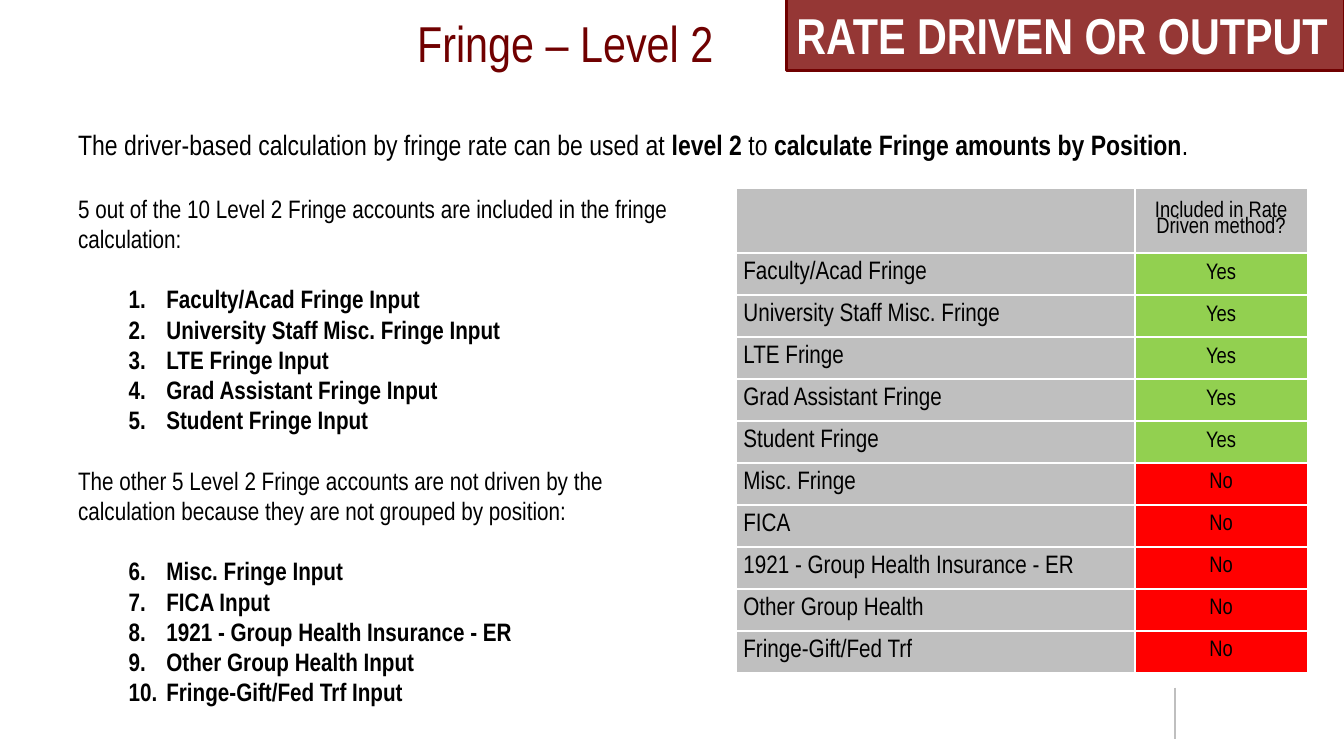
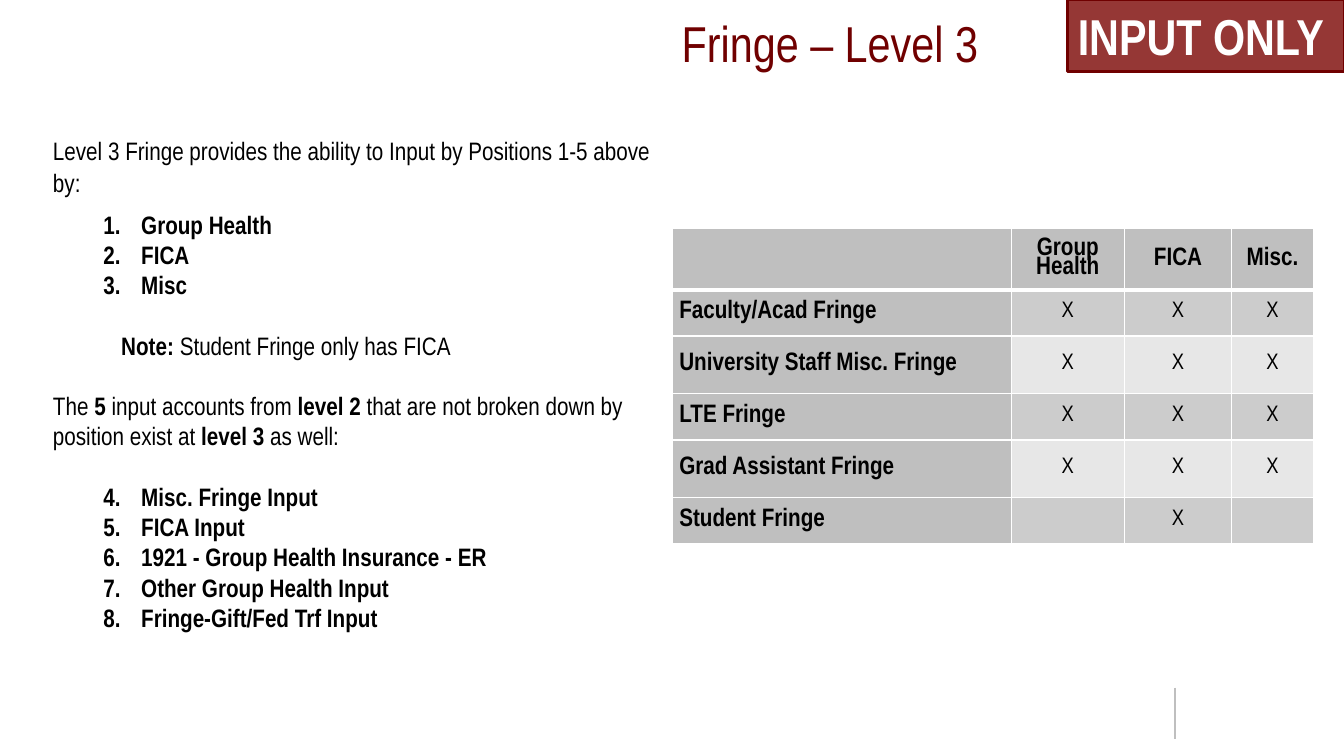
"""Build two slides on fringe levels, each with a banner, lists and a table."""
from lxml import etree
from pptx import Presentation, util as u
from pptx.dml.color import RGBColor
from pptx.enum import shapes, text
from pptx.oxml.ns import qn

BLACK = RGBColor(0x00, 0x00, 0x00)
WHITE = RGBColor(0xFF, 0xFF, 0xFF)
MAROON = RGBColor(0x70, 0x00, 0x00)
BRICK = RGBColor(0x95, 0x37, 0x35)
GRAY = RGBColor(0xBF, 0xBF, 0xBF)
DIM = RGBColor(0xCC, 0xCC, 0xCC)
PALE = RGBColor(0xE7, 0xE7, 0xE7)
GREEN = RGBColor(0x92, 0xD0, 0x50)
RED = RGBColor(0xFF, 0x00, 0x00)

FONT = "Arial Narrow"
LEFT, MID, RIGHT = text.PP_ALIGN.LEFT, text.PP_ALIGN.CENTER, text.PP_ALIGN.RIGHT
GAP = 21.6


def px(*vals):
    return [u.Emu(v * 9525) for v in vals]


class Deck:
    def __init__(self):
        self.prs = Presentation()
        self.prs.slide_width, self.prs.slide_height = px(1280, 720)
        self.slide = None

    def page(self, title, edge, label, box):
        self.slide = self.prs.slides.add_slide(self.prs.slide_layouts[6])
        self.rule(1119, 655, 1119, 704)
        self.banner(label, box)
        frame = self.box((0, 11, edge, 58))
        frame.vertical_anchor = text.MSO_ANCHOR.MIDDLE
        self.fill(frame.paragraphs[0], title, 36, MAROON, RIGHT)

    def rule(self, *ends):
        line = self.slide.shapes.add_connector(
            shapes.MSO_CONNECTOR.STRAIGHT, *px(*ends))
        line.line.color.rgb = GRAY
        line.line.width = u.Pt(1.5)
        etree.SubElement(line._element.spPr, qn("a:effectLst"))

    def banner(self, label, box):
        rect = self.slide.shapes.add_shape(
            shapes.MSO_SHAPE.RECTANGLE, *px(*box))
        rect.shadow.inherit = False
        rect.fill.solid()
        rect.fill.fore_color.rgb = BRICK
        rect.line.color.rgb = MAROON
        rect.line.width = u.Pt(2)
        frame = rect.text_frame
        frame.word_wrap = False
        frame.auto_size = text.MSO_AUTO_SIZE.SHAPE_TO_FIT_TEXT
        frame.vertical_anchor = text.MSO_ANCHOR.TOP
        self.fill(frame.paragraphs[0], "|" + label, 36, WHITE)

    def box(self, box):
        frame = self.slide.shapes.add_textbox(*px(*box)).text_frame
        frame.word_wrap = True
        return frame

    def fill(self, para, words, size=18, color=BLACK, align=LEFT):
        para.alignment = align
        for i, bit in enumerate(words.split("|")):
            if bit:
                run = para.add_run()
                run.text = bit
                font = run.font
                font.name, font.size, font.bold = FONT, u.Pt(size), i % 2 == 1
                font.color.rgb = color

    def para(self, frame, words, size=18, before=0, indent=0):
        para = frame.paragraphs[0]
        if para.runs:
            para = frame.add_paragraph()
        if indent:
            para._p.get_or_add_pPr().set("marL", str(px(indent)[0]))
        if before:
            para.space_before = u.Pt(before)
        self.fill(para, words, size)
        return para

    def items(self, frame, names, start=1, before=GAP):
        for i, name in enumerate(names):
            para = self.para(frame, "|" + name, 18, 0 if i else before, 84)
            props = para._p.get_or_add_pPr()
            props.set("indent", str(px(-36)[0]))
            etree.SubElement(props, qn("a:buFont"), typeface="+mj-lt")
            etree.SubElement(props, qn("a:buAutoNum"),
                             type="arabicPeriod", startAt=str(start))

    def table(self, at, cols, highs, rows, tints, head=18, thick=1):
        size = (sum(cols), sum(highs))
        grid = self.slide.shapes.add_table(
            len(rows), len(cols), *px(*at, *size)).table
        grid.first_row = grid.horz_banding = False
        for col, wide in zip(grid.columns, px(*cols)):
            col.width = wide
        for row, high in zip(grid.rows, px(*highs)):
            row.height = high
        for r, row in enumerate(rows):
            for c, words in enumerate(row):
                cell = grid.cell(r, c)
                self.edges(cell, r, thick)
                cell.fill.solid()
                cell.fill.fore_color.rgb = tints[r - 1] if r and c else GRAY
                cell.vertical_anchor = text.MSO_ANCHOR.MIDDLE
                cell.margin_left = cell.margin_right = px(7)[0]
                cell.margin_top = cell.margin_bottom = 0
                para = cell.text_frame.paragraphs[0]
                para.line_spacing = 0.8
                points = head if r == 0 else 16 if c else 18
                self.fill(para, words, points, align=MID if c else LEFT)

    def edges(self, cell, r, thick):
        props = cell._tc.get_or_add_tcPr()
        for side in ("lnL", "lnR", "lnT", "lnB"):
            wide = thick if (r, side) in ((0, "lnB"), (1, "lnT")) else 1
            line = etree.SubElement(props, qn("a:" + side), w=str(u.Pt(wide)))
            fill = etree.SubElement(line, qn("a:solidFill"))
            etree.SubElement(fill, qn("a:srgbClr"), val=str(WHITE))


STAFF = ["Faculty/Acad Fringe", "University Staff Misc. Fringe", "LTE Fringe",
         "Grad Assistant Fringe", "Student Fringe"]
OTHER = ["Misc. Fringe", "FICA", "1921 - Group Health Insurance - ER",
         "Other Group Health", "Fringe-Gift/Fed Trf"]


def inputs(names):
    return [n if n.endswith("ER") else n + " Input" for n in names]


def level_two(deck):
    deck.page("Fringe – Level 2", 689, "RATE DRIVEN OR OUTPUT",
              (749, -1, 531, 68))
    body = deck.box((65, 179, 603, 504))
    deck.para(body, "5 out of the 10 Level 2 Fringe accounts are included "
                    "in the fringe calculation:")
    deck.items(body, inputs(STAFF))
    deck.para(body, "The other 5 Level 2 Fringe accounts are not driven by the "
                    "calculation because they are not grouped by position:",
              before=GAP)
    deck.items(body, inputs(OTHER), 6)
    lead = deck.box((65, 117, 1163, 42))
    deck.para(lead, "The driver-based calculation by fringe rate can be used at "
                    "|level 2| to |calculate Fringe amounts by Position|.", 20)
    rows = [["", "Included in Rate Driven method?"]]
    rows += [[n, "Yes"] for n in STAFF] + [[n, "No"] for n in OTHER]
    deck.table((701, 179), [380, 164], [62] + [40] * 10, rows,
               [GREEN] * 5 + [RED] * 5, head=16)


def level_three(deck):
    deck.page("Fringe – Level 3", 941, "INPUT ONLY", (1017, 0, 263, 68))
    body = deck.box((41, 122, 618, 490))
    lead = deck.para(body, "Level 3 Fringe provides the ability to Input by "
                           "Positions 1-5 above by:")
    lead.line_spacing = 1.07
    lead.space_after = u.Pt(8)
    deck.items(body, ["Group Health", "FICA", "Misc"], before=0)
    deck.para(body, "|Note: |Student Fringe only has FICA",
              before=GAP, indent=65)
    deck.para(body, "The |5| input accounts from |level 2| that are not broken "
                    "down by position exist at |level 3| as well:", before=GAP)
    deck.items(body, inputs(OTHER), 4)
    rows = [["", "|Group Health", "|FICA", "|Misc."]]
    rows += [["|" + n, "X", "X", "X"] for n in STAFF[:-1]]
    rows.append(["|" + STAFF[-1], "", "X", ""])
    deck.table((640, 218), [323, 108, 102, 78], [58, 44, 55, 44, 55, 44], rows,
               [DIM, PALE, DIM, PALE, DIM], thick=3)


def main():
    deck = Deck()
    level_two(deck)
    level_three(deck)
    deck.prs.save("out.pptx")


if __name__ == "__main__":
    main()
